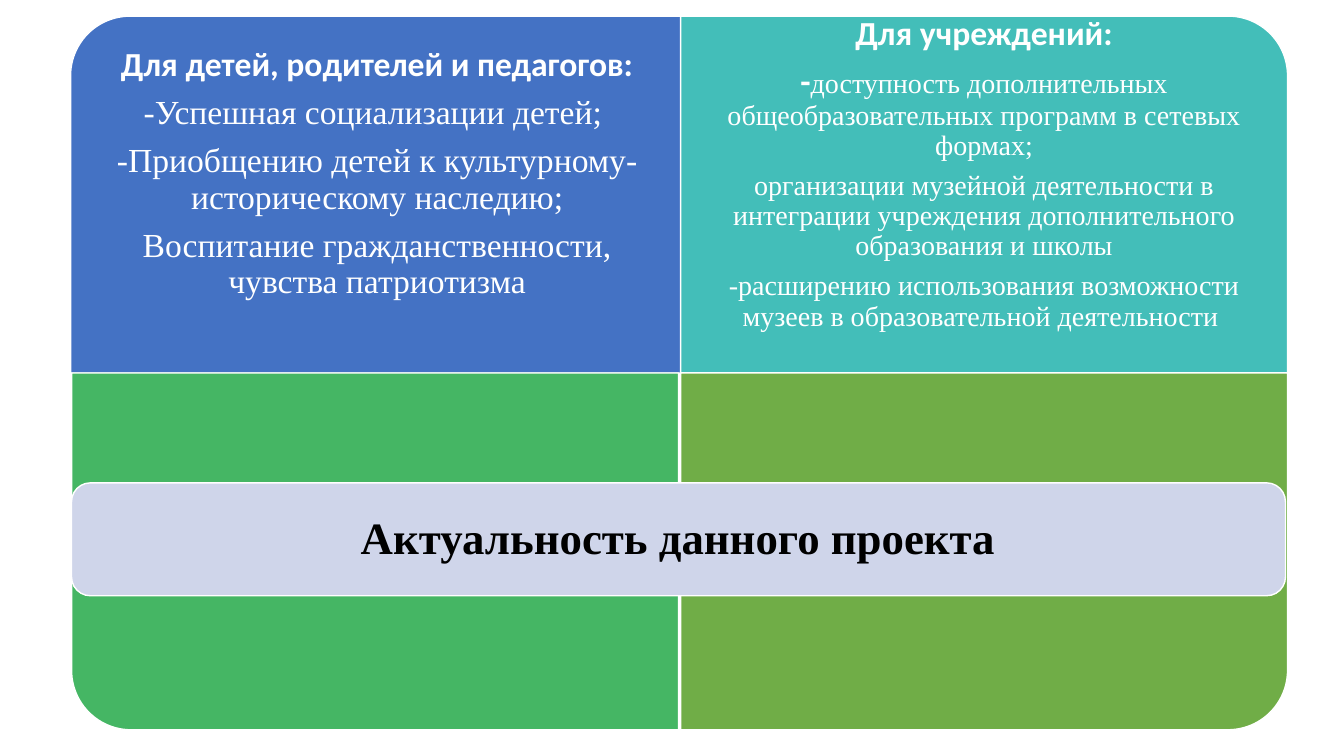
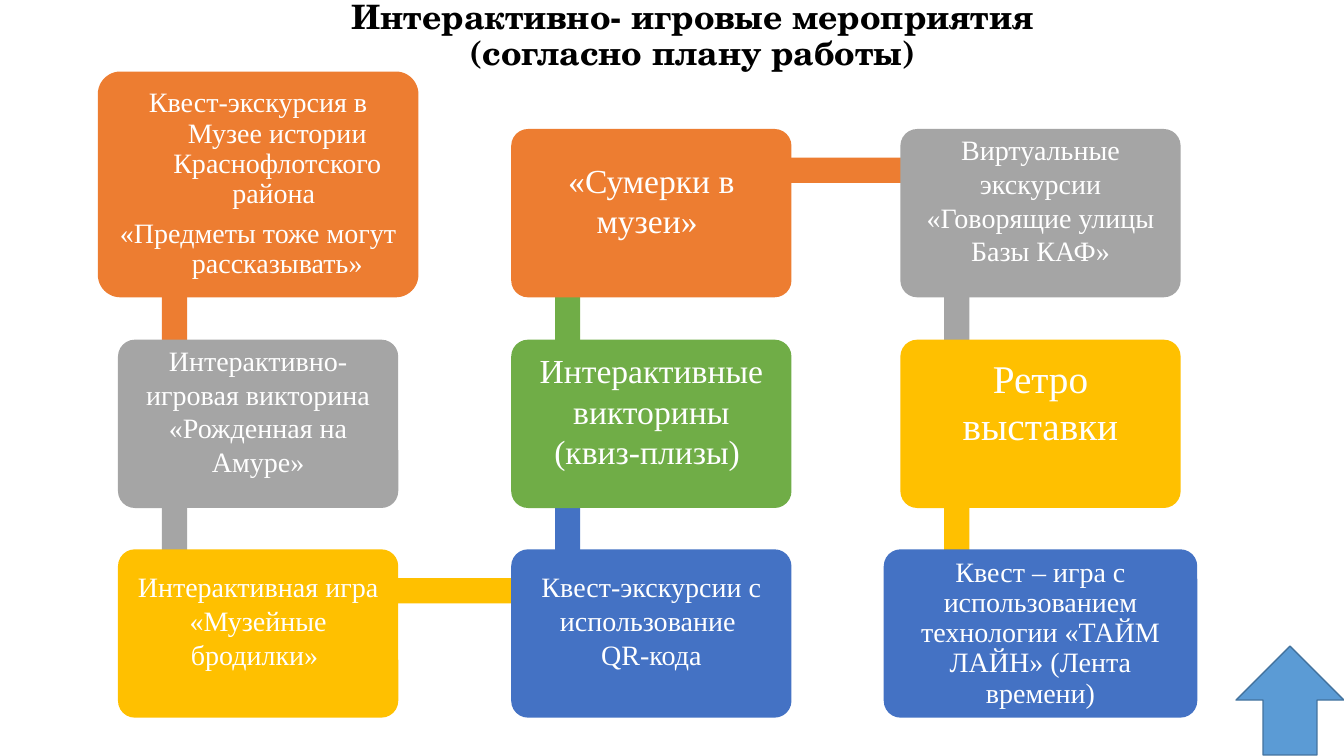
from collections import namedtuple
from itertools import pairwise

from pptx import Presentation
from pptx.dml.color import RGBColor
from pptx.enum.shapes import MSO_SHAPE as SHAPE
from pptx.enum.text import MSO_ANCHOR as ANCHOR, MSO_AUTO_SIZE as AUTO, PP_ALIGN as ALIGN
from pptx.util import Inches, Pt

COLORS = {
    "white": "FFFFFF", "black": "000000", "blue": "4472C4", "teal": "43BEB9",
    "emerald": "45B664", "green": "70AD47", "band": "CFD5EA", "orange": "ED7D31",
    "gray": "A5A5A5", "gold": "FFC000", "sky": "5B9BD5", "sky_edge": "43739E",
}
SERIF = "Times New Roman"
Font = namedtuple("Font", "name size bold", defaults=[False])
Card = namedtuple("Card", "col row color size lines width height bottom spacing hang",
                  defaults=[2.78, 1.67, 0.26, 1.0, 0])


def rgb(name):
    return RGBColor.from_string(COLORS[name])


class Deck:
    def __init__(self):
        self.prs = Presentation()
        self.prs.slide_width, self.prs.slide_height = Inches(13.33), Inches(7.5)
        self.s = None

    def new_slide(self):
        self.s = self.prs.slides.add_slide(self.prs.slide_layouts[5])

    def set_text(self, tf, paras, color="white", spacing=0.9, insets=(0, 0, 0, 0), hang=0):
        """Fill a frame; each paragraph is a list of (text, Font) runs."""
        tf.word_wrap, tf.auto_size = True, AUTO.NONE
        tf.vertical_anchor = ANCHOR.MIDDLE
        tf.margin_left, tf.margin_top, tf.margin_right, tf.margin_bottom = map(Inches, insets)
        for i, runs in enumerate(paras):
            p = tf.add_paragraph() if i else tf.paragraphs[0]
            p.alignment, p.line_spacing = ALIGN.CENTER, spacing
            if spacing < 1 and i < len(paras) - 1:
                p.space_after = Pt(round(0.35 * runs[-1][1].size, 1))
            if hang:
                pPr = p._p.get_or_add_pPr()
                pPr.set("marL", str(Inches(hang)))
                pPr.set("indent", str(-Inches(hang)))
            for text, font in runs:
                for n, line in enumerate(text.split("\n")):
                    if n:
                        p.add_line_break()
                    r = p.add_run()
                    r.text = line
                    r.font.name, r.font.size, r.font.bold = font.name, Pt(font.size), font.bold
                    r.font.color.rgb = rgb(color)

    def title(self, text, box, font):
        """Place the title above everything drawn so far."""
        sp = self.s.shapes.title
        sp.left, sp.top, sp.width, sp.height = map(Inches, box)
        self.set_text(sp.text_frame, [[(text, font)]], "black")
        self.s.shapes._spTree.append(sp._element)

    def text(self, paras, box, insets):
        sp = self.s.shapes.add_textbox(*map(Inches, box))
        self.set_text(sp.text_frame, paras, insets=insets)

    def shape(self, kind, box, fill, edge=None, adj=None):
        sp = self.s.shapes.add_shape(kind, *map(Inches, box))
        sp.shadow.inherit = False
        sp.fill.solid()
        sp.fill.fore_color.rgb = rgb(fill)
        if edge:
            sp.line.color.rgb = rgb(edge)
            sp.line.width = Pt(1)
        else:
            sp.line.fill.background()
        if adj is not None:
            sp.adjustments[0] = adj
        return sp

    def quadrant(self, box, fill, turn):
        """Draw a one-corner-rounded panel that covers box after its rotation."""
        x, y, w, h = box
        if turn % 180:
            x, y, w, h = x + (w - h) / 2, y + (h - w) / 2, h, w
        self.shape(SHAPE.ROUND_1_RECTANGLE, (x, y, w, h), fill, "white").rotation = turn

    def bar(self, start, end, fill, thick=0.25):
        """Draw an upright or level bar whose centre line joins two points."""
        (x1, y1), (x2, y2) = start, end
        box = (min(x1, x2), min(y1, y2), abs(x2 - x1), abs(y2 - y1))
        if x1 == x2:
            box = (x1 - thick / 2, box[1], thick, box[3])
        else:
            box = (box[0], y1 - thick / 2, box[2], thick)
        self.shape(SHAPE.RECTANGLE, box, fill)

    def card(self, c, left, top):
        """Draw a card centred on its column and standing on its row's base."""
        box = (left + (2.78 - c.width) / 2, top + 1.67 - c.height, c.width, c.height)
        sp = self.shape(SHAPE.ROUNDED_RECTANGLE, box, c.color, adj=0.1)
        pad = c.size / 240
        self.set_text(sp.text_frame, [[(t, Font(SERIF, c.size))] for t in c.lines],
                      spacing=c.spacing, insets=(pad, 0, pad, c.bottom), hang=c.hang)


def relevance_slide(deck):
    head, big, small = Font("Calibri", 24, True), Font(SERIF, 24), Font(SERIF, 20)
    left, right, top, mid, w, h = 0.71, 6.75, 0.16, 3.7, 6.02, 3.54
    deck.new_slide()
    deck.quadrant((0.7, top, 6.08, h), "blue", 270)
    deck.quadrant((right, top, w, h), "teal", 0)
    deck.quadrant((left, mid, w, h), "emerald", 180)
    deck.quadrant((right, mid, w, h), "green", 90)
    families = [
        [("Для детей, родителей и педагогов:", head)],
        [("-Успешная социализации детей; ", big)],
        [("-Приобщению детей к культурному-историческому наследию;", big)],
        [("Воспитание гражданственности, чувства патриотизма", big)],
    ]
    institutions = [
        [("Для учреждений:", head)],
        [("-", head), ("доступность дополнительных общеобразовательных программ "
                       "в сетевых формах;", small)],
        [("организации музейной деятельности в интеграции учреждения "
          "дополнительного образования и школы", small)],
        [("-расширению использования возможности музеев "
          "в образовательной деятельности ", small)],
    ]
    for paras, x, width in ((families, 0.7, 6.08), (institutions, right, w)):
        deck.text(paras, (x, top, width, 3.14), (0.19, 0, 0.19, 0))
    deck.shape(SHAPE.ROUNDED_RECTANGLE, (left, 4.79, 12.04, 1.12), "band", "white")
    deck.title("Актуальность данного проекта", (0.76, 4.85, 11.93, 1.01), Font(SERIF, 32, True))


def events_slide(deck):
    cols, rows = (1.17, 5.07, 8.93), (1.28, 3.37, 5.45)
    cards = [
        Card(0, 0, "orange", 20, ["Квест-экскурсия в Музее истории Краснофлотского района ",
                                  "«Предметы тоже могут рассказывать»"],
             width=3.18, height=2.24, bottom=0, spacing=0.9, hang=0.38),
        Card(0, 1, "gray", 20, ["Интерактивно-игровая викторина «Рожденная на Амуре»"]),
        Card(0, 2, "gold", 20, ["Интерактивная игра «Музейные бродилки» "]),
        Card(1, 2, "blue", 20, ["Квест-экскурсии с использование ", "QR-кода"]),
        Card(1, 1, "green", 24, ["Интерактивные викторины", "(квиз-плизы) "]),
        Card(1, 0, "orange", 24, ["«Сумерки в музеи» "]),
        Card(2, 0, "gray", 20, ["Виртуальные экскурсии «Говорящие улицы Базы КАФ»"]),
        Card(2, 1, "gold", 28, ["Ретро выставки"], bottom=0.45),
        Card(2, 2, "blue", 20, ["Квест – игра с использованием технологии "
                                "«ТАЙМ ЛАЙН» (Лента времени)"],
             width=3.11, bottom=0, spacing=0.9),
    ]
    deck.new_slide()
    deck.shape(SHAPE.UP_ARROW, (12.26, 6.41, 1.07, 1.08), "sky", "sky_edge")
    for a, b in pairwise(cards):
        start, end = ((cols[c.col] + 0.56, rows[c.row] + 0.41) for c in (a, b))
        deck.bar(start, end, a.color)
    for c in cards:
        deck.card(c, cols[c.col], rows[c.row])
    deck.title("Интерактивно- игровые мероприятия\n(согласно плану работы)",
               (0.53, 0.01, 12.68, 0.7), Font("TeX Gyre Schola", 24, True))


def main():
    deck = Deck()
    relevance_slide(deck)
    events_slide(deck)
    deck.prs.save("out.pptx")


if __name__ == "__main__":
    main()
